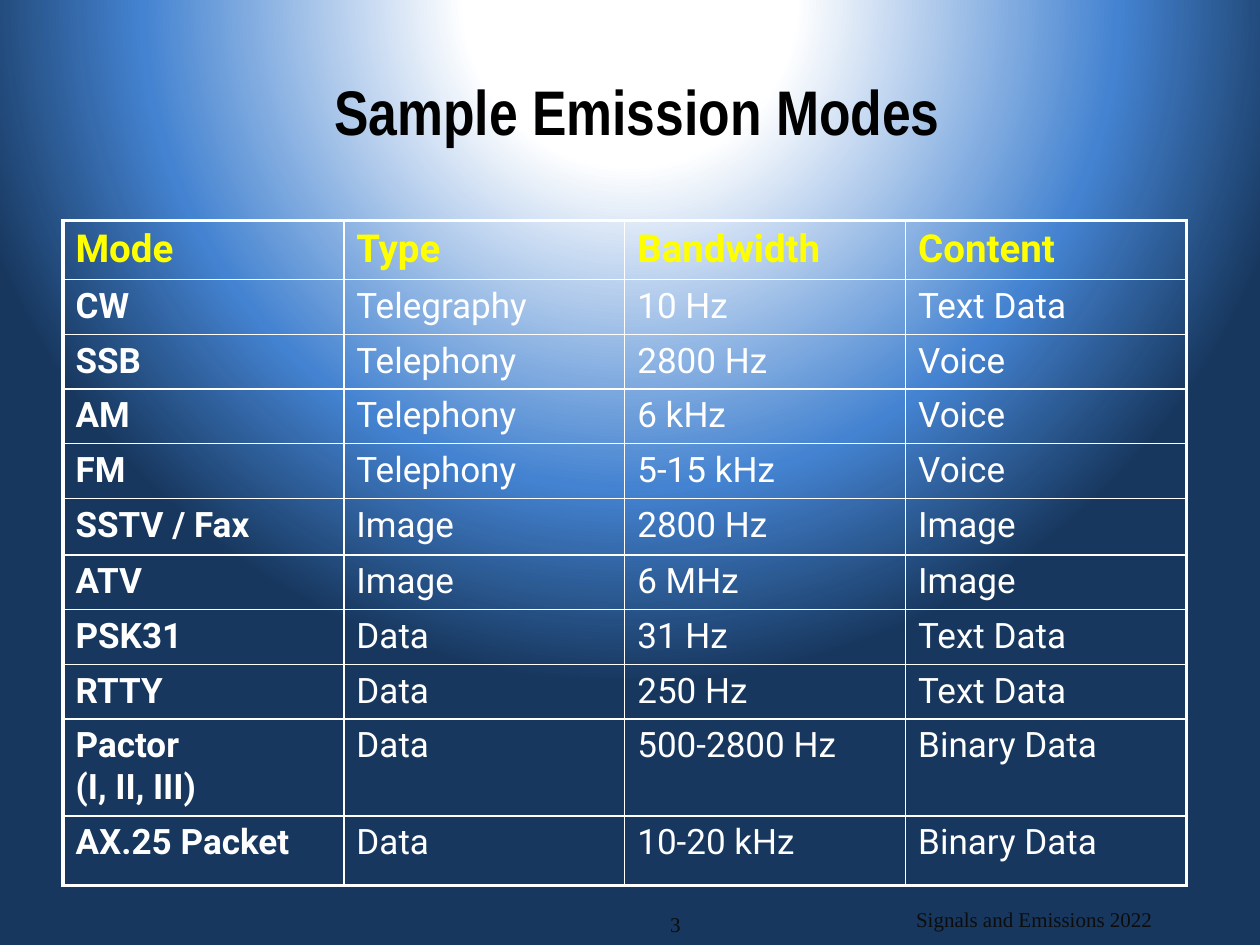
from lxml import etree
from pptx import Presentation
from pptx.dml.color import RGBColor
from pptx.enum.text import MSO_ANCHOR, PP_ALIGN
from pptx.oxml.ns import qn
from pptx.util import Inches, Pt

LEFT, CENTER, RIGHT = PP_ALIGN.LEFT, PP_ALIGN.CENTER, PP_ALIGN.RIGHT
MIDDLE = MSO_ANCHOR.MIDDLE
WIDTH, HEIGHT = Inches(10), Inches(7.5)
GRID_COLUMNS, GRID_ROWS = 120, 90
WHITE, YELLOW, BLACK, INK = "FFFFFF", "FFFF00", "000000", "0D0D0D"
TITLE_FACE, TABLE_FACE, FOOTER_FACE = "Arial Narrow", "Roboto", "Times New Roman"
THIN, THICK = 1, 2.25
GLOW_STOPS = [(21, "FFFFFF", 100), (62, "4483D1", 100), (87, "17375E", 78)]
GLOW_CENTER = {"l": 50, "t": -80, "r": 50, "b": 180}

HEADINGS = ["Mode", "Type", "Bandwidth", "Content"]
MODES = [
    ("CW", "Telegraphy", "10 Hz", "Text Data"),
    ("SSB", "Telephony", "2800 Hz", "Voice"),
    ("AM", "Telephony", "6 kHz", "Voice"),
    ("FM", "Telephony", "5-15 kHz", "Voice"),
    ("SSTV / Fax", "Image", "2800 Hz", "Image"),
    ("ATV", "Image", "6 MHz", "Image"),
    ("PSK31", "Data", "31 Hz", "Text Data"),
    ("RTTY", "Data", "250 Hz", "Text Data"),
    ("Pactor\n(I, II, III)", "Data", "500-2800 Hz", "Binary Data"),
    ("AX.25 Packet", "Data", "10-20 kHz", "Binary Data"),
]
ROW_WEIGHTS = [47] + [43] * 4 + [45] + [43] * 3 + [77, 55]


def color(hex_code):
    """Turn a hex string into a colour."""
    return RGBColor.from_string(hex_code)


def grid_box(column, row, columns, rows):
    """Turn grid columns and rows into left, top, width and height."""
    unit_x, unit_y = WIDTH / GRID_COLUMNS, HEIGHT / GRID_ROWS
    return (round(column * unit_x), round(row * unit_y),
            round(columns * unit_x), round(rows * unit_y))


def add_node(parent, tag, **attributes):
    """Append a drawing element with the given attributes."""
    return etree.SubElement(parent, qn(tag), {k: str(v) for k, v in attributes.items()})


def write(frame, text, face, size, ink, bold=False, align=LEFT, before=0):
    """Write one formatted paragraph; before is a percentage of a line."""
    paragraph = frame.paragraphs[0]
    paragraph.text = text
    paragraph.alignment = align
    if before:
        spacing = add_node(paragraph._p.get_or_add_pPr(), "a:spcBef")
        add_node(spacing, "a:spcPct", val=before * 1000)
    for run in paragraph.runs:
        run.font.name, run.font.size, run.font.bold = face, Pt(size), bold
        run.font.color.rgb = color(ink)


def add_label(slide, box, text, **style):
    """Place a vertically centred line of text in a box."""
    frame = slide.shapes.add_textbox(*box).text_frame
    frame.word_wrap = True
    frame.vertical_anchor = MIDDLE
    write(frame, text, **style)


def paint_background(slide):
    """Fill the background with a glow centred above the slide."""
    fill = slide.background.fill
    fill.gradient()
    gradient = slide.background._cSld.find(".//" + qn("a:gradFill"))
    for child in list(gradient):
        gradient.remove(child)
    stops = add_node(gradient, "a:gsLst")
    for position, hex_code, opacity in GLOW_STOPS:
        stop = add_node(stops, "a:gs", pos=position * 1000)
        tint = add_node(stop, "a:srgbClr", val=hex_code)
        if opacity < 100:
            add_node(tint, "a:alpha", val=opacity * 1000)
    glow = add_node(gradient, "a:path", path="circle")
    add_node(glow, "a:fillToRect", **{k: v * 1000 for k, v in GLOW_CENTER.items()})


def border_cell(cell, widths):
    """Draw white borders, given in the order left, right, top, bottom."""
    properties = cell._tc.get_or_add_tcPr()
    for index, (side, width) in enumerate(zip("LRTB", widths)):
        line = add_node(properties, "a:ln" + side, w=Pt(width))
        add_node(add_node(line, "a:solidFill"), "a:srgbClr", val=WHITE)
        properties.insert(index, line)


def add_modes_table(slide, box):
    """Place the table of emission modes in a box."""
    rows = [HEADINGS, *MODES]
    last_row, last_column = len(rows) - 1, len(HEADINGS) - 1
    table = slide.shapes.add_table(len(rows), len(HEADINGS), *box).table
    table.first_row = table.horz_banding = False
    for column in table.columns:
        column.width = box[2] // len(HEADINGS)
    for r, (values, weight) in enumerate(zip(rows, ROW_WEIGHTS)):
        table.rows[r].height = round(box[3] * weight / sum(ROW_WEIGHTS))
        size, ink = (22, YELLOW) if r == 0 else (20, WHITE)
        for c, value in enumerate(values):
            cell = table.cell(r, c)
            cell.fill.background()
            write(cell.text_frame, value, TABLE_FACE, size, ink,
                  bold=r == 0 or c == 0, before=20)
            outer = (c == 0, c == last_column, r == 0, r == last_row)
            border_cell(cell, [THICK if edge else THIN for edge in outer])


def add_footer(slide, credit_box, number_box):
    """Place the course name and the page number."""
    style = {"face": FOOTER_FACE, "size": 12, "ink": INK}
    add_label(slide, credit_box, "Signals and Emissions 2022", align=CENTER, **style)
    add_label(slide, number_box, "3", align=RIGHT, **style)


def main():
    """Build and save the slide."""
    deck = Presentation()
    deck.slide_width, deck.slide_height = WIDTH, HEIGHT
    slide = deck.slides.add_slide(deck.slide_layouts[6])
    paint_background(slide)
    add_label(slide, grid_box(2, 0, 116, 21), " Sample Emission Modes",
              face=TITLE_FACE, size=36, ink=BLACK, bold=True, align=CENTER)
    add_modes_table(slide, grid_box(6, 21, 107, 63))
    add_footer(slide, grid_box(77, 85, 43, 5), grid_box(54, 86, 12, 4))
    deck.save("out.pptx")


if __name__ == "__main__":
    main()
